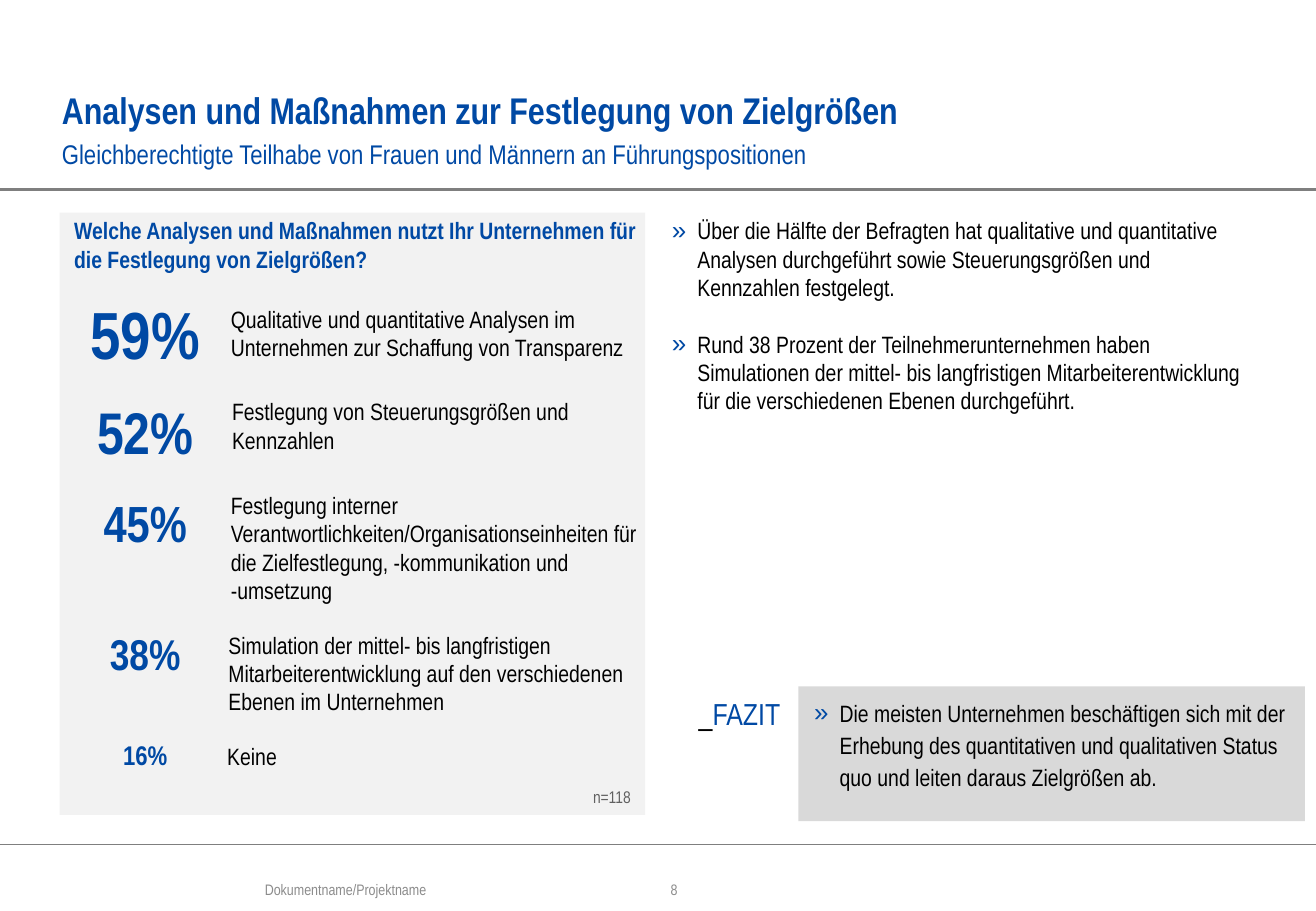
"""Build the slide on analyses and measures for setting target figures."""
import pptx
import pptx.dml.color
import pptx.enum.shapes
import pptx.enum.text
import pptx.oxml
import pptx.oxml.ns
import pptx.util

SCALE = 9144
FONT = "Arial Narrow"
BLUE = "0049A4"
BLACK = "000000"
FOOTER_GREY = "8C8C8C"
LINE_GREY = "7F7F7F"
ALIGN = pptx.enum.text.PP_ALIGN
ANCHOR = pptx.enum.text.MSO_ANCHOR

MEASURES = [
    ("59%", 39.5, 241, 190, 251,
     "Qualitative und quantitative Analysen im\n"
     "Unternehmen zur Schaffung von Transparenz"),
    ("52%", 34.8, 326, 191, 327,
     "Festlegung von Steuerungsgrößen und Kennzahlen"),
    ("45%", 30.1, 405, 190, 404,
     "Festlegung interner Verantwortlichkeiten/Organisationseinheiten "
     "für die Zielfestlegung, -kommunikation und\n-umsetzung"),
    ("38%", 25.5, 517, 188, 519,
     "Simulation der mittel- bis langfristigen Mitarbeiterentwicklung "
     "auf den verschiedenen Ebenen im Unternehmen"),
    ("16%", 16, 608, 187, 611, "Keine"),
]
FINDINGS = (
    "Über die Hälfte der Befragten hat qualitative und quantitative Analysen "
    "durchgeführt sowie Steuerungsgrößen und Kennzahlen festgelegt.\n"
    "Rund 38 Prozent der Teilnehmerunternehmen haben Simulationen der mittel- bis "
    "langfristigen Mitarbeiterentwicklung für die verschiedenen Ebenen durchgeführt."
)
CONCLUSION = (
    "Die meisten Unternehmen beschäftigen sich mit der Erhebung des quantitativen "
    "und qualitativen Status quo und leiten daraus Zielgrößen ab."
)


def px(value):
    """Turn hundredths of an inch into EMU."""
    return pptx.util.Emu(value * SCALE)


def color(value):
    """Turn a hex string into a colour."""
    return pptx.dml.color.RGBColor.from_string(value)


def add_bullet(para):
    """Give a paragraph a hanging blue guillemet."""
    properties = para._p.get_or_add_pPr()
    properties.set("marL", str(px(21)))
    properties.set("indent", str(px(-21)))
    space = pptx.oxml.ns.nsdecls("a")
    for markup in (
        f'<a:buClr {space}><a:srgbClr val="{BLUE}"/></a:buClr>',
        f'<a:buSzPct {space} val="110000"/>',
        f'<a:buFont {space} typeface="Arial"/>',
        f'<a:buChar {space} char="»"/>',
    ):
        properties.append(pptx.oxml.parse_xml(markup))


def add_span(para, text, size=14, ink=BLACK, bold=False):
    """Add one formatted run to a paragraph."""
    span = para.add_run()
    span.text = text
    span.font.name = FONT
    span.font.size = pptx.util.Pt(size)
    span.font.bold = bold
    span.font.color.rgb = color(ink)


def add_text(page, text, left, top, width, height, align=ALIGN.LEFT,
             anchor=ANCHOR.TOP, spacing=None, gap=0, bullet=False, **style):
    """Add a text box with one paragraph per line and return it."""
    box = page.shapes.add_textbox(px(left), px(top), px(width), px(height))
    frame = box.text_frame
    frame.word_wrap = True
    frame.vertical_anchor = anchor
    frame.margin_left = frame.margin_right = 0
    frame.margin_top = frame.margin_bottom = 0
    for index, line in enumerate(text.split("\n")):
        para = frame.add_paragraph() if index else frame.paragraphs[0]
        if bullet:
            add_bullet(para)
        para.alignment = align
        if spacing:
            para.line_spacing = spacing
        if index and gap:
            para.space_before = pptx.util.Pt(gap)
        add_span(para, line, **style)
    return box


def add_panel(page, left, top, width, height, fill):
    """Add a plain filled rectangle."""
    panel = page.shapes.add_shape(pptx.enum.shapes.MSO_SHAPE.RECTANGLE,
                                  px(left), px(top), px(width), px(height))
    panel.shadow.inherit = False
    panel.fill.solid()
    panel.fill.fore_color.rgb = color(fill)
    panel.line.fill.background()


def add_rule(page, top, width, weight):
    """Add a horizontal grey line from the left edge."""
    rule = page.shapes.add_connector(pptx.enum.shapes.MSO_CONNECTOR.STRAIGHT,
                                     0, px(top), px(width), px(top))
    rule.line.color.rgb = color(LINE_GREY)
    rule.line.width = pptx.util.Pt(weight)
    effects = f'<a:effectLst {pptx.oxml.ns.nsdecls("a")}/>'
    rule._element.spPr.append(pptx.oxml.parse_xml(effects))


def add_measure(page, share, size, share_top, left, top, label):
    """Add one percentage with its label."""
    add_text(page, share, 69, share_top, 101, 66, align=ALIGN.CENTER,
             size=size, ink=BLUE, bold=True)
    add_text(page, label, left, top, 340, 47)


def main():
    """Build and save the deck."""
    deck = pptx.Presentation()
    deck.slide_width, deck.slide_height = px(1083), px(750)
    page = deck.slides.add_slide(deck.slide_layouts[6])

    add_rule(page, 156, 1083, 2)
    add_rule(page, 695, 1083, 0.75)
    add_text(page, "Analysen und Maßnahmen zur Festlegung von Zielgrößen",
             51, 33, 981, 76, anchor=ANCHOR.BOTTOM, spacing=pptx.util.Pt(27),
             size=22, ink=BLUE, bold=True)
    add_text(page, "Gleichberechtigte Teilhabe von Frauen und Männern an Führungspositionen",
             51, 109, 981, 26, spacing=pptx.util.Pt(22), size=16, ink=BLUE)

    add_panel(page, 49, 175, 482, 496, "F2F2F2")
    add_text(page, "Welche Analysen und Maßnahmen nutzt Ihr Unternehmen "
             "für die Festlegung von Zielgrößen?", 61, 178, 472, 47, ink=BLUE, bold=True)
    for measure in MEASURES:
        add_measure(page, *measure)
    add_text(page, "n=118", 470, 648, 49, 17, align=ALIGN.RIGHT, size=10, ink="606060")

    add_text(page, FINDINGS, 553, 178, 480, 251, bullet=True, gap=16.8)
    add_panel(page, 657, 565, 417, 111, "D9D9D9")
    verdict = add_text(page, "_", 575, 572, 80, 30, size=18)
    add_span(verdict.text_frame.paragraphs[0], "FAZIT", size=18, ink=BLUE)
    add_text(page, CONCLUSION, 670, 572, 391, 100, bullet=True, spacing=1.14)

    add_text(page, "Dokumentname/Projektname", 218, 725, 313, 13, size=9, ink=FOOTER_GREY)
    add_text(page, "8", 552, 725, 120, 13, size=9, ink=FOOTER_GREY)
    deck.save("out.pptx")


if __name__ == "__main__":
    main()
